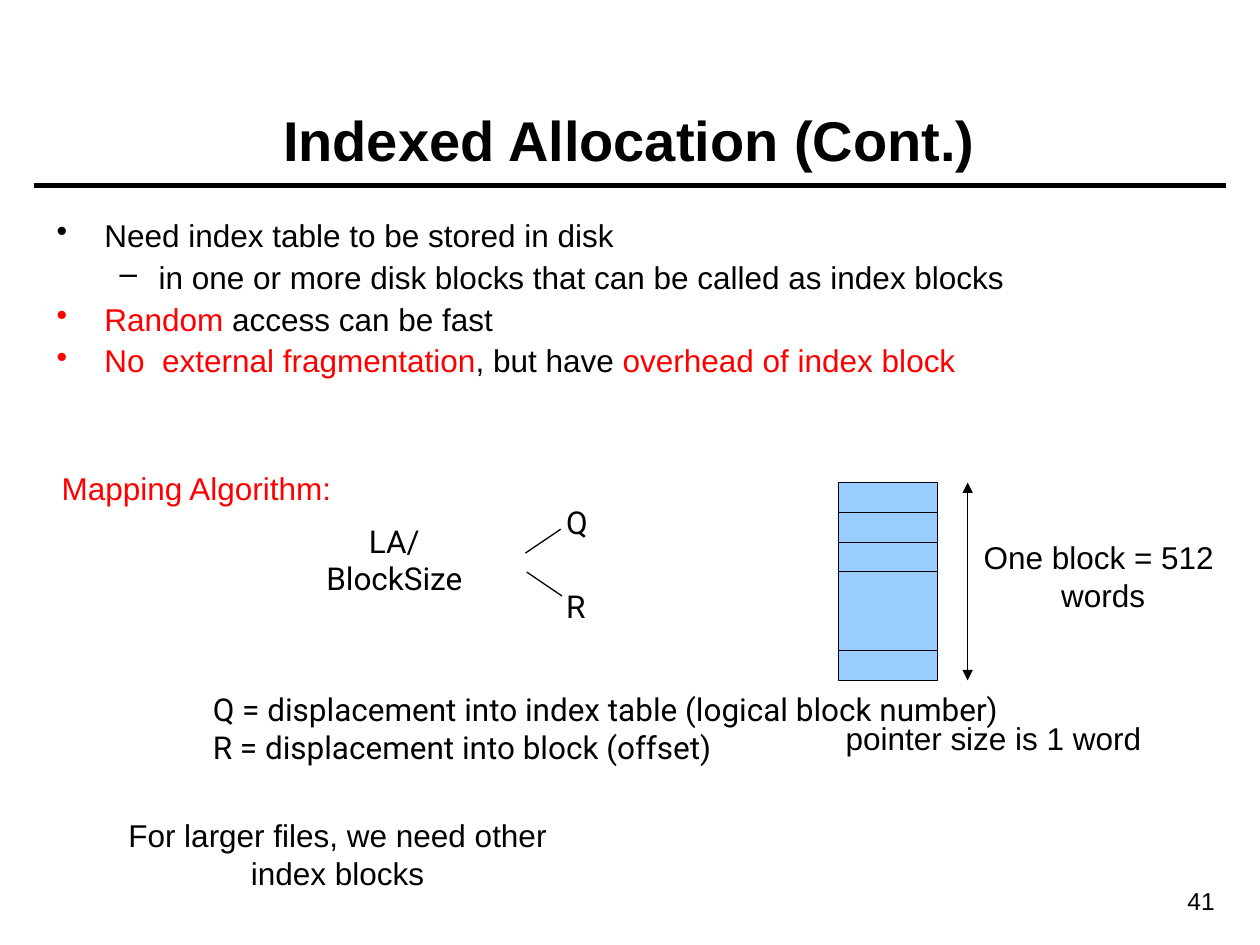
import pptx
import pptx.util
import pptx.dml.color
import pptx.enum.shapes
import pptx.enum.text
from lxml import etree
from pptx.oxml.ns import qn

Inches, Pt = pptx.util.Inches, pptx.util.Pt
RGBColor = pptx.dml.color.RGBColor
ALIGN = pptx.enum.text.PP_ALIGN
ANCHOR = pptx.enum.text.MSO_ANCHOR
BLACK = RGBColor(0x00, 0x00, 0x00)
RED = RGBColor(0xFF, 0x00, 0x00)
BLUE = RGBColor(0x99, 0xCC, 0xFF)

TITLE = "Indexed Allocation (Cont.)"
# Level, then runs of (text, colour)
BULLETS = [
    (0, [("Need index table to be stored in disk", BLACK)]),
    (1, [("in one or more disk blocks that can be called as index blocks", BLACK)]),
    (0, [("Random", RED), (" access can be fast", BLACK)]),
    (0, [("No  external fragmentation", RED), (", but have ", BLACK),
         ("overhead of index block", RED)]),
]
LEVELS = [("•", 0.38, -0.38), ("–", 0.81, -0.31)]  # bullet, margin, indent

MIDDLE = dict(font="Roboto", align=ALIGN.CENTER, anchor=ANCHOR.MIDDLE)
CENTER = dict(align=ALIGN.CENTER)
# Box, lines, format
LABELS = [
    ((8.7, 6.98, 1.04, 0.34), ["41"], dict(size=14, align=ALIGN.RIGHT, wrap=True)),
    ((2.49, 4.24, 1.67, 0.4), ["LA/BlockSize"],
     dict(MIDDLE, wrap=True, left=0, right=0.39)),
    ((4.38, 3.94, 0.4, 0.4), ["Q"], MIDDLE),
    ((4.38, 4.61, 0.38, 0.4), ["R"], MIDDLE),
    ((1.59, 5.43, 7.69, 0.91),
     ["Q = displacement into index table (logical block number)",
      "R = displacement into block (offset)"], dict(font="Roboto", wrap=True)),
    ((0.59, 6.43, 4.96, 0.4), ["For larger files, we need other index blocks"],
     dict(CENTER, wrap=True, right=0.88)),
    ((7.71, 4.22, 2.09, 0.7), ["One block = 512 ", "words"], CENTER),
    ((6.61, 5.66, 2.55, 0.4), ["pointer size is 1 word"], CENTER),
    ((0.38, 3.67, 2.36, 0.41), ["Mapping Algorithm:"], dict(CENTER, color=RED)),
]

# Start, end, width, arrowheads
LINES = [
    ((0.27, 1.47), (9.73, 1.47), 3, False),
    ((4.17, 4.39), (4.45, 4.2), 0.75, False),
    ((4.18, 4.54), (4.46, 4.73), 0.75, False),
    ((7.68, 3.83), (7.68, 5.4), 0.25, True),
]
BLOCK_LEFT, BLOCK_TOP, BLOCK_WIDTH = 6.65, 3.83, 0.79
BLOCK_HEIGHTS = [0.24, 0.24, 0.24, 0.63, 0.24]


def place(sp, box):
    sp.left, sp.top, sp.width, sp.height = map(Inches, box)


def write(sp, paragraphs, size=18, font="Arial", color=BLACK, bold=False,
          align=ALIGN.LEFT, anchor=ANCHOR.TOP, wrap=False, left=0.1, right=0.1):
    """Fill sp with paragraphs, each a string or a list of (text, colour) runs."""
    tf = sp.text_frame
    tf.auto_size = pptx.enum.text.MSO_AUTO_SIZE.NONE
    tf.word_wrap, tf.vertical_anchor = wrap, anchor
    tf.margin_left, tf.margin_right = Inches(left), Inches(right)
    for i, runs in enumerate(paragraphs):
        p = tf.paragraphs[0] if i == 0 else tf.add_paragraph()
        p.alignment = align
        for text, run_color in [(runs, color)] if isinstance(runs, str) else runs:
            r = p.add_run()
            r.text = text
            r.font.size, r.font.name, r.font.bold = Pt(size), font, bold
            r.font.color.rgb = run_color
    return tf


def add_text(s, box, paragraphs, **fmt):
    return write(s.shapes.add_textbox(*map(Inches, box)), paragraphs, **fmt)


def add_bullets(s, box):
    tf = add_text(s, box, [runs for _, runs in BULLETS], wrap=True)
    for p, (level, _) in zip(tf.paragraphs, BULLETS):
        char, margin, indent = LEVELS[level]
        p.level, p.line_spacing, p.space_before = level, 0.9, Pt(4.4)
        pPr = p._p.get_or_add_pPr()
        pPr.set("marL", str(Inches(margin)))
        pPr.set("indent", str(Inches(indent)))
        etree.SubElement(pPr, qn("a:buChar"), char=char)


def add_line(s, start, end, width, arrows):
    line = s.shapes.add_connector(pptx.enum.shapes.MSO_CONNECTOR.STRAIGHT,
                                  *map(Inches, start + end))
    line.line.color.rgb, line.line.width = BLACK, Pt(width)
    if arrows:
        ln = line.line._get_or_add_ln()
        for tag in ("a:headEnd", "a:tailEnd"):
            etree.SubElement(ln, qn(tag), type="triangle")
    etree.SubElement(line._element.spPr, qn("a:effectLst"))


def add_index_block(s):
    top = BLOCK_TOP
    for height in BLOCK_HEIGHTS:
        sp = s.shapes.add_shape(pptx.enum.shapes.MSO_SHAPE.RECTANGLE,
                                *map(Inches, (BLOCK_LEFT, top, BLOCK_WIDTH, height)))
        sp.shadow.inherit = False
        sp.fill.solid()
        sp.fill.fore_color.rgb = BLUE
        sp.line.color.rgb, sp.line.width = BLACK, Pt(0.25)
        top += height - 0.005  # neighbours share an edge


def main():
    prs = pptx.Presentation()
    prs.slide_width, prs.slide_height = Inches(10), Inches(7.5)
    s = prs.slides.add_slide(prs.slide_layouts[5])
    title = s.shapes.title
    place(title, (0.35, 0.17, 9.29, 1.25))
    write(title, [TITLE], size=32, bold=True, align=ALIGN.CENTER,
          anchor=ANCHOR.BOTTOM, wrap=True)
    add_bullets(s, (0.35, 1.7, 8.32, 2.62))
    add_index_block(s)
    for line in LINES:
        add_line(s, *line)
    for box, lines, fmt in LABELS:
        add_text(s, box, lines, **fmt)
    prs.save("out.pptx")


if __name__ == "__main__":
    main()
